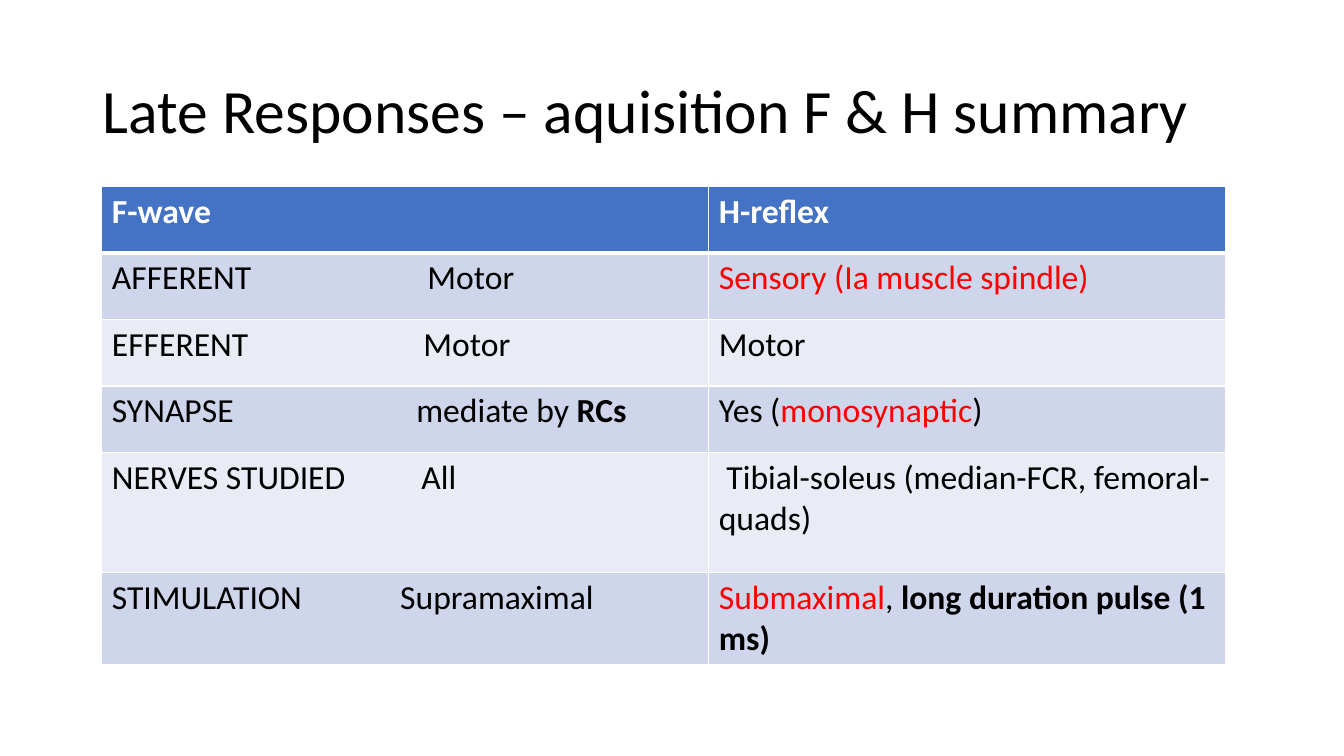
from pptx import Presentation
from pptx import util as u
from pptx.dml import color
from pptx.enum import text
from pptx.oxml import ns
from lxml import etree

BLACK, WHITE, RED = "000000", "FFFFFF", "FF0000"
HEADER_FILL, BANDS = "4472C4", ("CFD5EA", "E9EBF5")


def rgb(value):
    return color.RGBColor.from_string(value)


def assign(target, values):
    for name, value in values.items():
        setattr(target, name, value)


class SummarySlide:
    """Hold the style and the current slide, and draw its elements."""

    font = "Calibri"

    def __init__(self, deck):
        self.slide = deck.slides.add_slide(deck.slide_layouts[5])

    def add_words(self, paragraph, words, size, ink=BLACK, bold=None):
        run = paragraph.add_run()
        run.text = words
        assign(run.font, {"name": self.font, "size": u.Pt(size), "bold": bold})
        run.font.color.rgb = rgb(ink)

    def title(self, words, left, top, width, height):
        heading = self.slide.shapes.title
        assign(heading, {"left": u.Inches(left), "top": u.Inches(top),
                         "width": u.Inches(width), "height": u.Inches(height)})
        assign(heading.text_frame, {"word_wrap": True,
                                    "auto_size": text.MSO_AUTO_SIZE.NONE,
                                    "vertical_anchor": text.MSO_ANCHOR.MIDDLE})
        line = heading.text_frame.paragraphs[0]
        assign(line, {"alignment": text.PP_ALIGN.LEFT, "line_spacing": 0.9})
        self.add_words(line, words, 44)

    def tab_stop(self, paragraph, position):
        properties = paragraph._p.get_or_add_pPr()
        stops = etree.SubElement(properties, ns.qn("a:tabLst"))
        etree.SubElement(stops, ns.qn("a:tab"),
                         pos=str(u.Inches(position)), algn="l")

    def borders(self, cell, widths):
        properties = cell._tc.get_or_add_tcPr()
        for order, (side, width) in enumerate(widths.items()):
            edge = etree.Element(ns.qn(f"a:ln{side}"), w=str(u.Pt(width)))
            paint = etree.SubElement(edge, ns.qn("a:solidFill"))
            etree.SubElement(paint, ns.qn("a:srgbClr"), val=WHITE)
            properties.insert(order, edge)

    def cell(self, cell, runs, fill, edges, tab=None):
        cell.fill.solid()
        cell.fill.fore_color.rgb = rgb(fill)
        self.borders(cell, edges)
        paragraph = cell.text_frame.paragraphs[0]
        if tab:
            self.tab_stop(paragraph, tab)
        for words, ink, bold in runs:
            self.add_words(paragraph, words, 24, ink, bold)

    def table(self, rows, left, top, widths, heights):
        frame = self.slide.shapes.add_table(
            len(rows), len(widths), u.Inches(left), u.Inches(top),
            u.Inches(sum(widths)), u.Inches(sum(heights)))
        grid = frame.table
        for column, width in zip(grid.columns, widths):
            column.width = u.Inches(width)
        for row, height in zip(grid.rows, heights):
            row.height = u.Inches(height)
        for index, (tab, *contents) in enumerate(rows):
            fill = BANDS[(index - 1) % 2] if index else HEADER_FILL
            edges = {"L": 1, "R": 1, "T": 3 if index == 1 else 1,
                     "B": 1 if index else 3}
            for column, runs in enumerate(contents):
                self.cell(grid.cell(index, column), runs, fill, edges,
                          None if column else tab)


def plain(words):
    return words, BLACK, False


def strong(words):
    return words, BLACK, True


def red(words):
    return words, RED, False


def header(words):
    return words, WHITE, True


RESPONSES = [
    (None, [header("F-wave")], [header("H-reflex")]),
    (3.13, [plain("AFFERENT\tMotor")], [red("Sensory (Ia muscle spindle)")]),
    (3.09, [plain("EFFERENT\tMotor")], [plain("Motor")]),
    (3.02, [plain("SYNAPSE\tmediate by "), strong("RCs")],
     [plain("Yes ("), red("monosynaptic"), plain(")")]),
    (3.07, [plain("NERVES STUDIED\tAll")],
     [plain(" Tibial-soleus (median-FCR, femoral-quads)")]),
    (2.86, [plain("STIMULATION\tSupramaximal")],
     [red("Submaximal"), plain(", "), strong("long duration pulse (1 ms)")]),
]


def main():
    deck = Presentation()
    assign(deck, {"slide_width": u.Inches(13.33), "slide_height": u.Inches(7.5)})
    summary = SummarySlide(deck)
    summary.title("Late Responses – aquisition F & H summary", 0.92, 0.4, 11.5, 1.45)
    summary.table(RESPONSES, 1.01, 1.85, [6.02, 5.13], [0.66] * 4 + [1.19, 0.91])
    deck.save("out.pptx")


if __name__ == "__main__":
    main()
